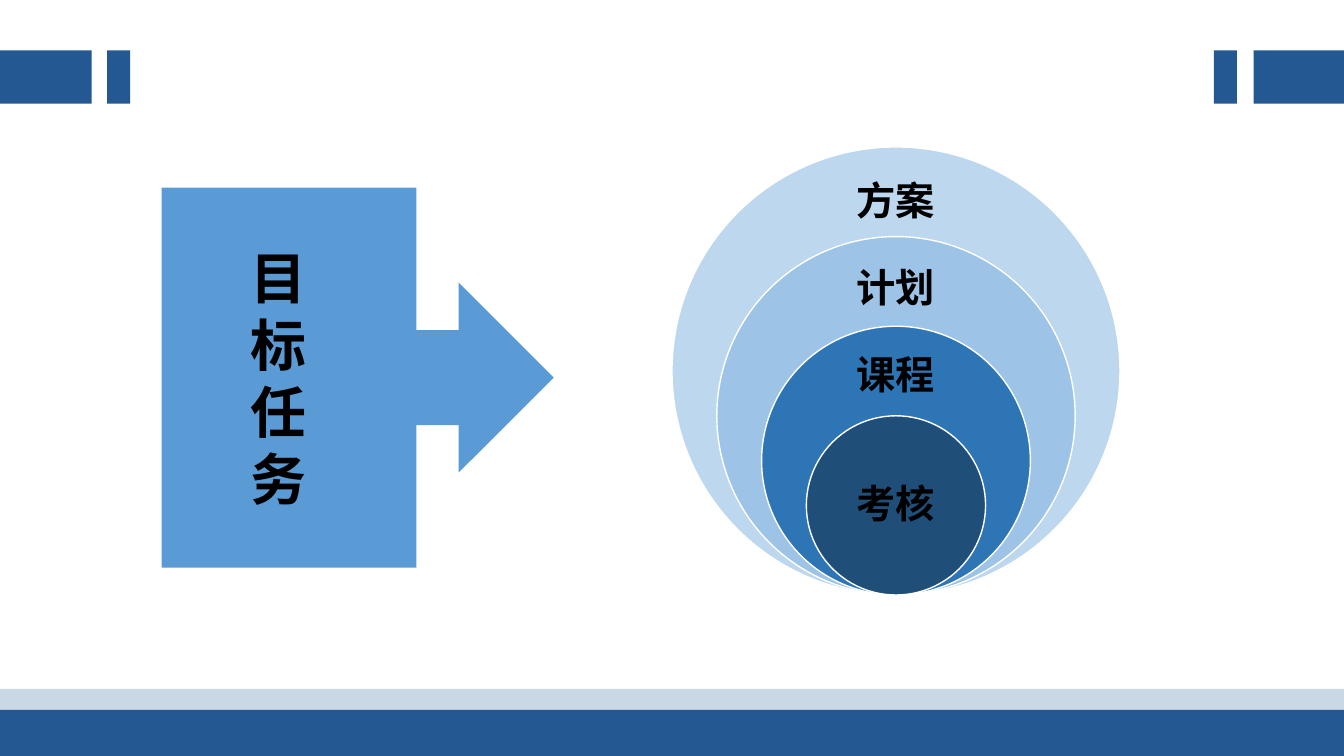
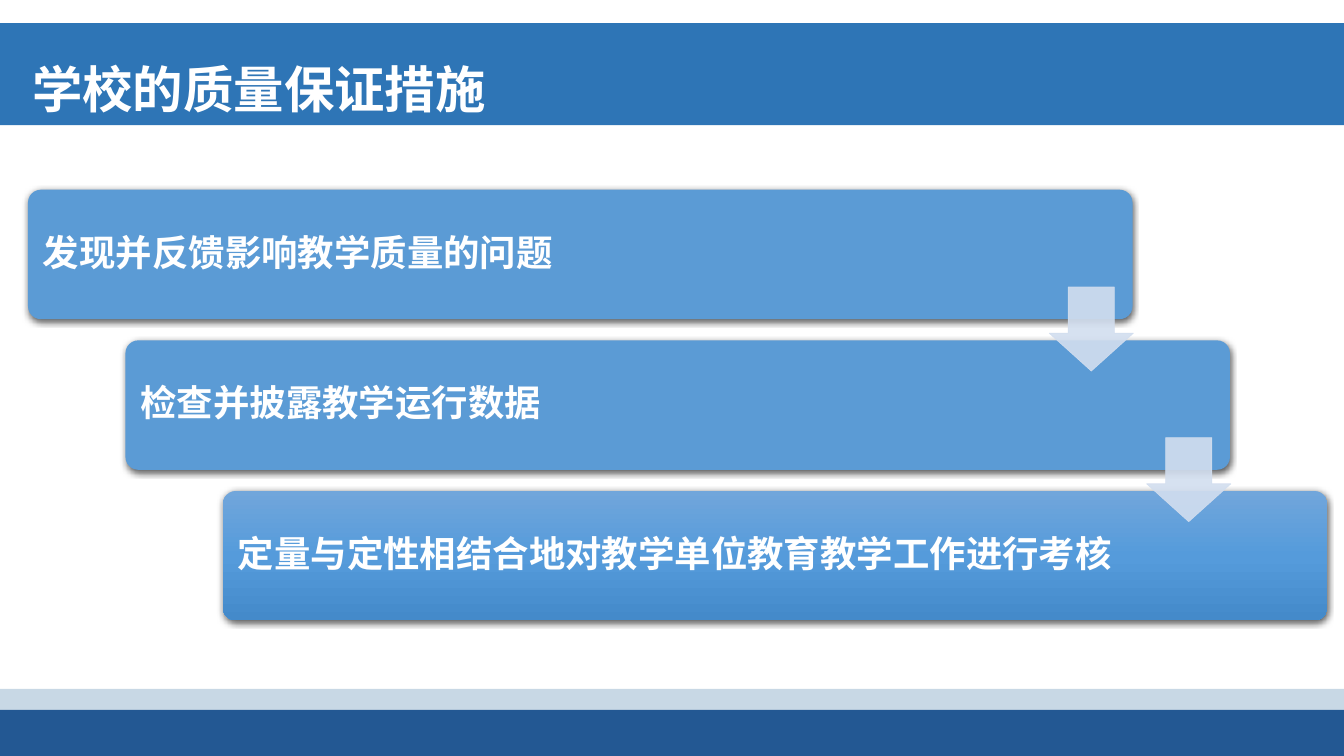
import pptx
import pptx.util
import pptx.dml.color
import pptx.enum.shapes
import pptx.enum.text
import pptx.oxml
import pptx.oxml.ns
import lxml.etree

Pt = pptx.util.Pt
qn = pptx.oxml.ns.qn
SHAPE = pptx.enum.shapes.MSO_SHAPE
ANCHOR = pptx.enum.text.MSO_ANCHOR
ALIGN = pptx.enum.text.PP_ALIGN
FONT = "Noto Sans CJK SC"
COLORS = {
    "navy": "235893",
    "mist": "C8D8E5",
    "title": "2E75B6",
    "blue": "5B9BD5",
    "arrow": "D2DEEF",
    "white": "FFFFFF",
    "black": "000000",
}
RINGS = [("方案", "BDD7EE"), ("计划", "9DC3E6"), ("课程", "2E75B6"), ("考核", "1F4E79")]
MEASURES = [
    "发现并反馈影响教学质量的问题",
    "检查并披露教学运行数据",
    "定量与定性相结合地对教学单位教育教学工作进行考核",
]
GRADIENT = [(0, "71A6DB"), (50, "559BDB"), (100, "448ACA")]


def draw(page, kind, left, top, width, height, fill, line=None, line_width=1):
    shape = page.shapes.add_shape(kind, Pt(left), Pt(top), Pt(width), Pt(height))
    shape.shadow.inherit = False
    shape.fill.solid()
    shape.fill.fore_color.rgb = pptx.dml.color.RGBColor.from_string(fill)
    if line:
        shape.line.color.rgb = pptx.dml.color.RGBColor.from_string(line)
        shape.line.width = Pt(line_width)
    else:
        shape.line.fill.background()
    return shape


def write(box, text, size, color, align=ALIGN.LEFT, anchor=ANCHOR.MIDDLE,
          spacing=1.0, margins=(0, 0, 0, 0), wrap=True):
    frame = box.text_frame
    frame.auto_size = pptx.enum.text.MSO_AUTO_SIZE.NONE
    frame.word_wrap = wrap
    frame.vertical_anchor = anchor
    frame.margin_left, frame.margin_top, frame.margin_right, frame.margin_bottom = map(Pt, margins)
    frame.text = text
    for para in frame.paragraphs:
        para.alignment = align
        para.line_spacing = spacing
        for span in para.runs:
            span.font.name = FONT
            span.font.size = Pt(size)
            span.font.bold = True
            span.font.color.rgb = pptx.dml.color.RGBColor.from_string(color)
    for properties in box.element.iter(qn("a:rPr")):
        lxml.etree.SubElement(properties, qn("a:ea"), typeface=FONT)


deck = pptx.Presentation()
deck.slide_width, deck.slide_height = Pt(960), Pt(540)
goal_page = deck.slides.add_slide(deck.slide_layouts[6])
measure_page = deck.slides.add_slide(deck.slide_layouts[5])

master_bands = [
    (0, 492, 960, 39, COLORS["mist"]),
    (0, 507, 960, 33, COLORS["navy"]),
    (0, 36, 65.5, 38, COLORS["navy"]),
]
for index, (left, top, width, height, fill) in enumerate(master_bands):
    band = draw(goal_page, SHAPE.RECTANGLE, left, top, width, height, fill)
    band.element.nvSpPr.cNvPr.set("id", str(101 + index))
    deck.slide_master.shapes.element.append(band.element)

for left, width in [(76.5, 16.5), (867, 16.5), (895.5, 64.5)]:
    draw(goal_page, SHAPE.RECTANGLE, left, 36, width, 38, COLORS["navy"])

ring_bottom, ring_center = 425, 640
for index, (label, fill) in enumerate(RINGS):
    diameter = 320 - 64 * index
    ring = draw(goal_page, SHAPE.OVAL, ring_center - diameter / 2, ring_bottom - diameter,
                diameter, diameter, fill, COLORS["white"])
    if index < len(RINGS) - 1:
        label_box = goal_page.shapes.add_textbox(
            Pt(ring_center - 45), Pt(121 + 62 * index), Pt(90), Pt(48))
    else:
        label_box = ring
    write(label_box, label, 28, COLORS["black"], align=ALIGN.CENTER, spacing=0.9, wrap=False)

callout = draw(goal_page, SHAPE.RIGHT_ARROW_CALLOUT, 115.5, 134, 280, 271.5, COLORS["blue"])
write(callout, "目\n标\n任\n务", 40, COLORS["black"], align=ALIGN.CENTER, margins=(0, 0, 15, 0))

title = measure_page.shapes.title
title.left, title.top, title.width, title.height = Pt(0), Pt(16.5), Pt(960), Pt(73)
title.fill.solid()
title.fill.fore_color.rgb = pptx.dml.color.RGBColor.from_string(COLORS["title"])
write(title, "学校的质量保证措施", 36, COLORS["white"], anchor=ANCHOR.TOP,
      spacing=1.5, margins=(23, 3.6, 7.2, 0))

step_x, step_y = 69.6, 107.6
for index, measure in enumerate(MEASURES):
    bar = draw(measure_page, SHAPE.ROUNDED_RECTANGLE, 20 + step_x * index, 135.5 + step_y * index,
               789, 92.5, COLORS["blue"])
    bar.adjustments[0] = 0.1
    write(bar, measure, 26, COLORS["white"], spacing=0.9, margins=(8, 8, 8, 8))
    effects = bar.element.spPr.find(qn("a:effectLst"))
    shadow = lxml.etree.SubElement(effects, qn("a:outerShdw"), blurRad=str(Pt(4.5)),
                                   dist=str(Pt(1.5)), dir="5400000", rotWithShape="0")
    shade = lxml.etree.SubElement(shadow, qn("a:srgbClr"), val=COLORS["black"])
    lxml.etree.SubElement(shade, qn("a:alpha"), val="63000")

gradient = pptx.oxml.parse_xml(
    '<a:gradFill xmlns:a="http://schemas.openxmlformats.org/drawingml/2006/main">'
    '<a:gsLst/><a:lin ang="5400000" scaled="0"/></a:gradFill>')
for position, color in GRADIENT:
    stop = lxml.etree.SubElement(gradient[0], qn("a:gs"), pos=str(position * 1000))
    lxml.etree.SubElement(stop, qn("a:srgbClr"), val=color)
bar.element.spPr.replace(bar.element.spPr.find(qn("a:solidFill")), gradient)

for index in range(len(MEASURES) - 1):
    arrow = draw(measure_page, SHAPE.DOWN_ARROW, 749.5 + step_x * index, 205 + step_y * index,
                 60, 60, COLORS["arrow"], COLORS["arrow"], 0.5)
    arrow.adjustments[0], arrow.adjustments[1] = 0.55, 0.45
    for color in arrow.element.spPr.iter(qn("a:srgbClr")):
        lxml.etree.SubElement(color, qn("a:alpha"), val="90000")

deck.save("out.pptx")
